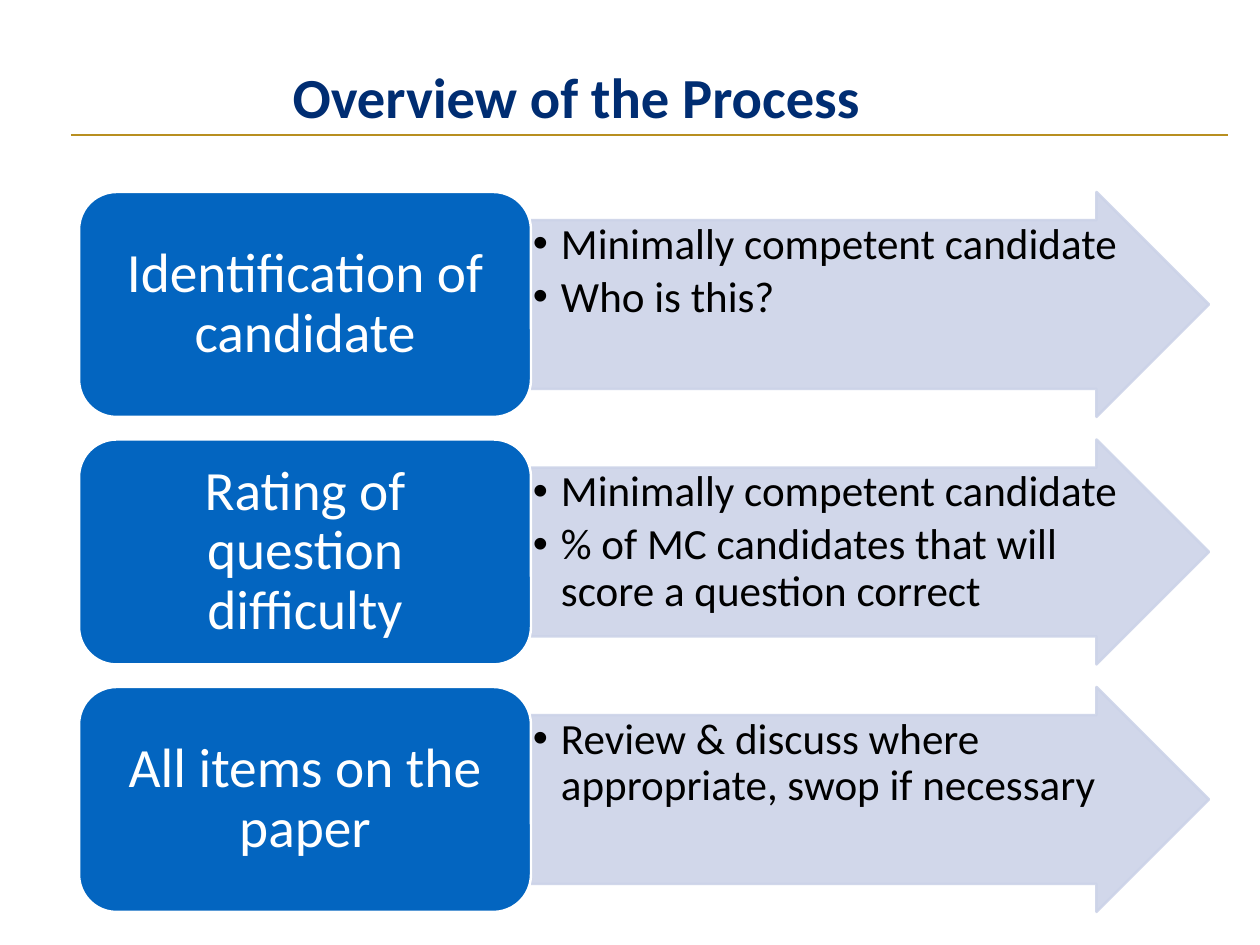
from lxml.etree import SubElement
from pptx import Presentation
from pptx.dml.color import RGBColor
from pptx.enum.shapes import MSO_CONNECTOR, MSO_SHAPE
from pptx.enum.text import MSO_ANCHOR, MSO_AUTO_SIZE, PP_ALIGN
from pptx.oxml.ns import qn
from pptx.util import Pt

PX = 10320  # EMU per pixel
COLOURS = {"navy": "002D72", "gold": "B88F20", "blue": "0365C0",
           "pale": "CCD3E8", "white": "FFFFFF", "black": "000000"}
STAGES = [
    ("Identification of candidate",
     ["Minimally competent candidate", "Who is this?"]),
    ("Rating of question difficulty",
     ["Minimally competent candidate",
      "% of MC candidates that will score a question correct"]),
    ("All items on the paper",
     ["Review & discuss where appropriate, swop if necessary"]),
]


def px(length):
    return round(length * PX)


def rgb(name):
    return RGBColor.from_string(COLOURS[name])


def apply(target, values):
    for name, value in values.items():
        setattr(target, name, value)


def set_frame(frame, anchor, side=0, top=0):
    apply(frame, {"word_wrap": True, "auto_size": MSO_AUTO_SIZE.NONE,
                  "vertical_anchor": anchor,
                  "margin_left": px(side), "margin_right": px(side),
                  "margin_top": px(top), "margin_bottom": px(top)})


def write(paragraph, text, size, colour, bold=False, **layout):
    paragraph.text = text
    apply(paragraph, layout)
    font = paragraph.runs[0].font
    apply(font, {"name": "Calibri", "size": Pt(size), "bold": bold})
    font.color.rgb = rgb(colour)


def add_bullet(paragraph, indent):
    properties = paragraph._p.get_or_add_pPr()
    properties.set("marL", str(px(indent)))
    properties.set("indent", str(-px(indent)))
    SubElement(properties, qn("a:buFont")).set("typeface", "Arial")
    SubElement(properties, qn("a:buChar")).set("char", "•")


def add_block(slide, kind, box, fill, line, opacity=100):
    block = slide.shapes.add_shape(kind, *map(px, box))
    block.shadow.inherit = False
    block.fill.solid()
    block.fill.fore_color.rgb = rgb(fill)
    block.line.color.rgb = rgb(line)
    block.line.width = Pt(2)
    if opacity < 100:
        for colour in block._element.spPr.iter(qn("a:srgbClr")):
            SubElement(colour, qn("a:alpha")).set("val", str(opacity * 1000))
    return block


def add_heading(slide, left, top, width, height):
    heading = slide.shapes.title
    apply(heading, {"left": px(left), "top": px(top),
                    "width": px(width), "height": px(height)})
    set_frame(heading.text_frame, MSO_ANCHOR.BOTTOM)
    write(heading.text_frame.paragraphs[0], "Overview of the Process", 46,
          "navy", bold=True, alignment=PP_ALIGN.CENTER, line_spacing=0.8)


def add_rule(slide, left, y, width):
    rule = slide.shapes.add_connector(
        MSO_CONNECTOR.STRAIGHT, px(left), px(y), px(left + width), px(y))
    rule.line.color.rgb = rgb("gold")
    rule.line.width = Pt(1)
    SubElement(rule._element.spPr, qn("a:effectLst"))


def add_stage(slide, left, top, width, height, label, details):
    """Place a rounded label with an arrow of bullets to its right."""
    label_width = width * 0.4
    arrow = add_block(slide, MSO_SHAPE.RIGHT_ARROW,
                      (left + label_width, top, width - label_width, height),
                      "pale", "pale", opacity=90)
    arrow.adjustments[0] = 0.75
    arrow.adjustments[1] = 0.5
    set_frame(arrow.text_frame, MSO_ANCHOR.TOP, side=2, top=2)
    for index, detail in enumerate(details):
        paragraph = (arrow.text_frame.add_paragraph() if index
                     else arrow.text_frame.paragraphs[0])
        add_bullet(paragraph, 28)
        write(paragraph, detail, 35, "black", alignment=PP_ALIGN.LEFT,
              level=1, line_spacing=0.9, space_after=Pt(5.25))

    name = add_block(slide, MSO_SHAPE.ROUNDED_RECTANGLE,
                     (left, top, label_width, height), "blue", "white")
    set_frame(name.text_frame, MSO_ANCHOR.MIDDLE, side=17, top=8)
    write(name.text_frame.paragraphs[0], label, 45, "white",
          alignment=PP_ALIGN.CENTER, line_spacing=0.9)


def add_process(slide, left, top, width, height, stage_height):
    """Spread the stages evenly down the box."""
    pitch = (height - stage_height) / (len(STAGES) - 1)
    for index, (label, details) in enumerate(STAGES):
        add_stage(slide, left, top + index * pitch, width, stage_height,
                  label, details)


def main():
    deck = Presentation()
    deck.slide_width, deck.slide_height = px(1260), px(945)
    slide = deck.slides.add_slide(deck.slide_layouts[5])
    add_rule(slide, 71, 135, 1157)
    add_heading(slide, 69, -33, 1014, 162)
    add_process(slide, 79, 192, 1130, 720, stage_height=225)
    deck.save("out.pptx")


if __name__ == "__main__":
    main()
